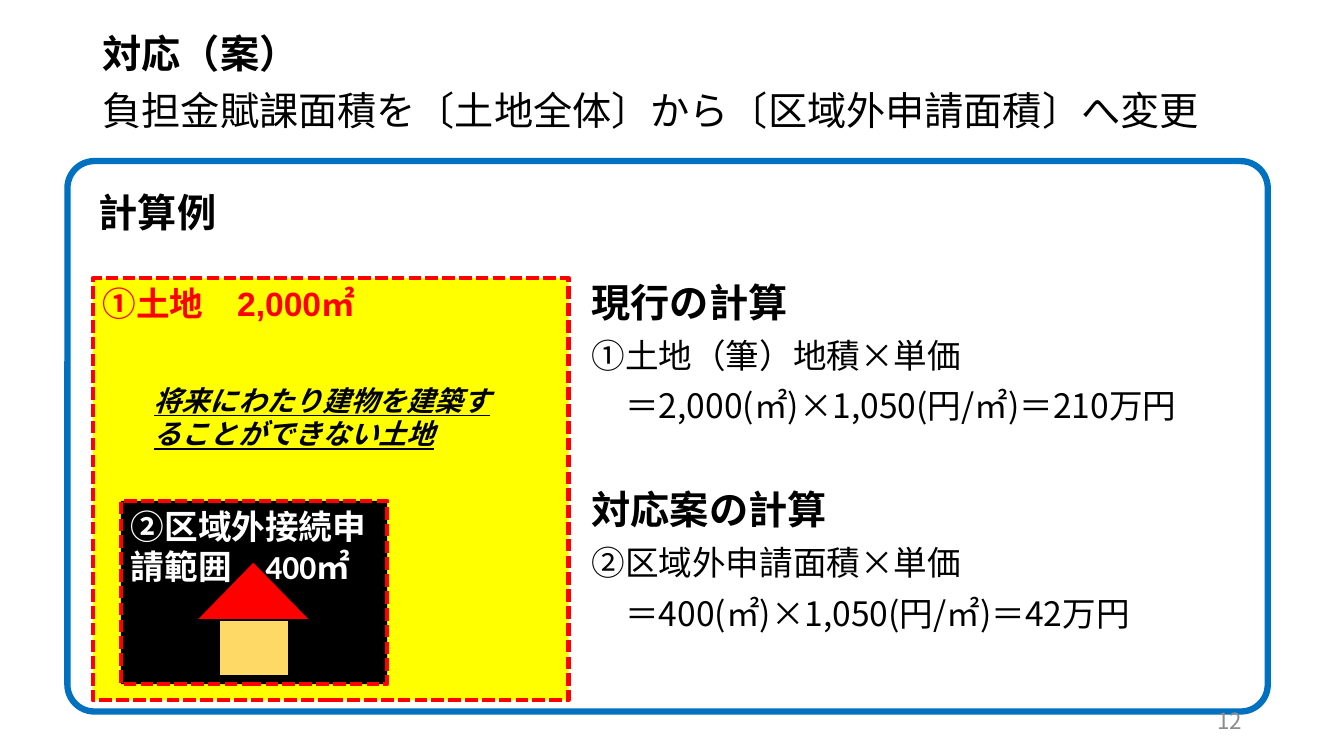
"""Build the slide comparing the current and proposed land charge calculations."""
from lxml import etree
from pptx import Presentation
from pptx.dml.color import RGBColor
from pptx.enum.dml import MSO_LINE
from pptx.enum.shapes import MSO_SHAPE
from pptx.enum.text import MSO_ANCHOR, PP_ALIGN
from pptx.oxml.ns import qn
from pptx.util import Cm, Pt

RECTANGLE = MSO_SHAPE.RECTANGLE
ROUNDED = MSO_SHAPE.ROUNDED_RECTANGLE
TRIANGLE = MSO_SHAPE.ISOSCELES_TRIANGLE
DASH = MSO_LINE.SQUARE_DOT
TOP, MIDDLE = MSO_ANCHOR.TOP, MSO_ANCHOR.MIDDLE
LEFT, RIGHT = PP_ALIGN.LEFT, PP_ALIGN.RIGHT
NOTO = "Noto Sans CJK JP"
COLORS = {
    "black": "000000", "white": "FFFFFF", "red": "FF0000", "yellow": "FFFF00",
    "blue": "0070C0", "wall": "FFD966", "gray": "8C8C8C",
}


def add_span(para, text, size=28, font=NOTO, color="black", bold=False, italic=False, underline=False):
    span = para.add_run()
    span.text = text
    span.font.size = Pt(size)
    span.font.name = font
    span.font.bold = bold
    span.font.italic = italic
    span.font.underline = underline
    span.font.color.rgb = RGBColor.from_string(COLORS[color])
    etree.SubElement(span.font._element, qn("a:ea"), typeface=NOTO)


def add_area(parent, kind, place, fill, line, width, dash=None):
    area = parent.add_shape(kind, *map(Cm, place))
    area.shadow.inherit = False
    if fill:
        area.fill.solid()
        area.fill.fore_color.rgb = RGBColor.from_string(COLORS[fill])
    else:
        area.fill.background()
    area.line.color.rgb = RGBColor.from_string(COLORS[line])
    area.line.width = Pt(width)
    if dash:
        area.line.dash_style = dash
    area.text_frame.vertical_anchor = TOP
    area.text_frame.paragraphs[0].alignment = LEFT
    return area


deck = Presentation()
deck.slide_width, deck.slide_height = Cm(33.87), Cm(19.05)
page = deck.slides.add_slide(deck.slide_layouts[6])
shapes = page.shapes

frame = add_area(shapes, ROUNDED, (1.7, 4.06, 30.25, 13.87), None, "blue", 4.5)
frame.adjustments[0] = 0.049

land = add_area(shapes, RECTANGLE, (2.34, 7.01, 11.99, 10.64), "yellow", "red", 3, DASH)
para = land.text_frame.paragraphs[0]
add_span(para, "①土地　", size=24, font="Calibri", color="red", bold=True)
add_span(para, "2,000㎡", size=24, font="Arial", color="red", bold=True)

request = add_area(shapes, RECTANGLE, (3.05, 12.62, 6.71, 4.62), "black", "red", 3, DASH)
add_span(request.text_frame.paragraphs[0], "②区域外接続申請範囲　400㎡",
         size=24, font="Calibri", color="white", bold=True)

house = shapes.add_group_shape().shapes
add_area(house, TRIANGLE, (4.95, 14.15, 2.87, 1.47), "red", "black", 1)
add_area(house, RECTANGLE, (5.54, 15.62, 1.73, 1.4), "wall", "black", 1)

heading = {"bold": True}
formula = {"size": 24}
text_boxes = [
    ((2.34, 0.76, 29.21, 3.73), [
        ("対応（案）", 10, heading),
        ("負担金賦課面積を〔土地全体〕から〔区域外申請面積〕へ変更", 10, {}),
    ]),
    ((2.24, 4.75, 9.27, 1.85), [("計算例", 10, heading)]),
    ((14.66, 7.01, 16.89, 9.65), [
        ("現行の計算", 10, heading),
        ("①土地（筆）地積×単価", 10, formula),
        ("　＝2,000(㎡)×1,050(円/㎡)＝210万円", 10, formula),
        ("対応案の計算", 46, heading),
        ("②区域外申請面積×単価", 10, formula),
        ("　＝400(㎡)×1,050(円/㎡)＝42万円", 10, formula),
    ]),
]
for place, lines in text_boxes:
    box = shapes.add_textbox(*map(Cm, place))
    box.text_frame.word_wrap = True
    for index, (text, gap, style) in enumerate(lines):
        para = box.text_frame.add_paragraph() if index else box.text_frame.paragraphs[0]
        para.line_spacing = 0.9
        para.space_before = Pt(gap)
        add_span(para, text, **style)

note = shapes.add_textbox(Cm(3.63), Cm(9.53), Cm(9.3), Cm(1.96))
note.text_frame.word_wrap = True
add_span(note.text_frame.paragraphs[0], "将来にわたり建物を建築することができない土地",
         size=20, font="Arial", bold=True, italic=True, underline=True)

number = shapes.add_textbox(Cm(23.93), Cm(17.65), Cm(7.62), Cm(1.02))
number.text_frame.word_wrap = True
number.text_frame.vertical_anchor = MIDDLE
number.text_frame.paragraphs[0].alignment = RIGHT
add_span(number.text_frame.paragraphs[0], "12", size=16, color="gray")

deck.save("out.pptx")
